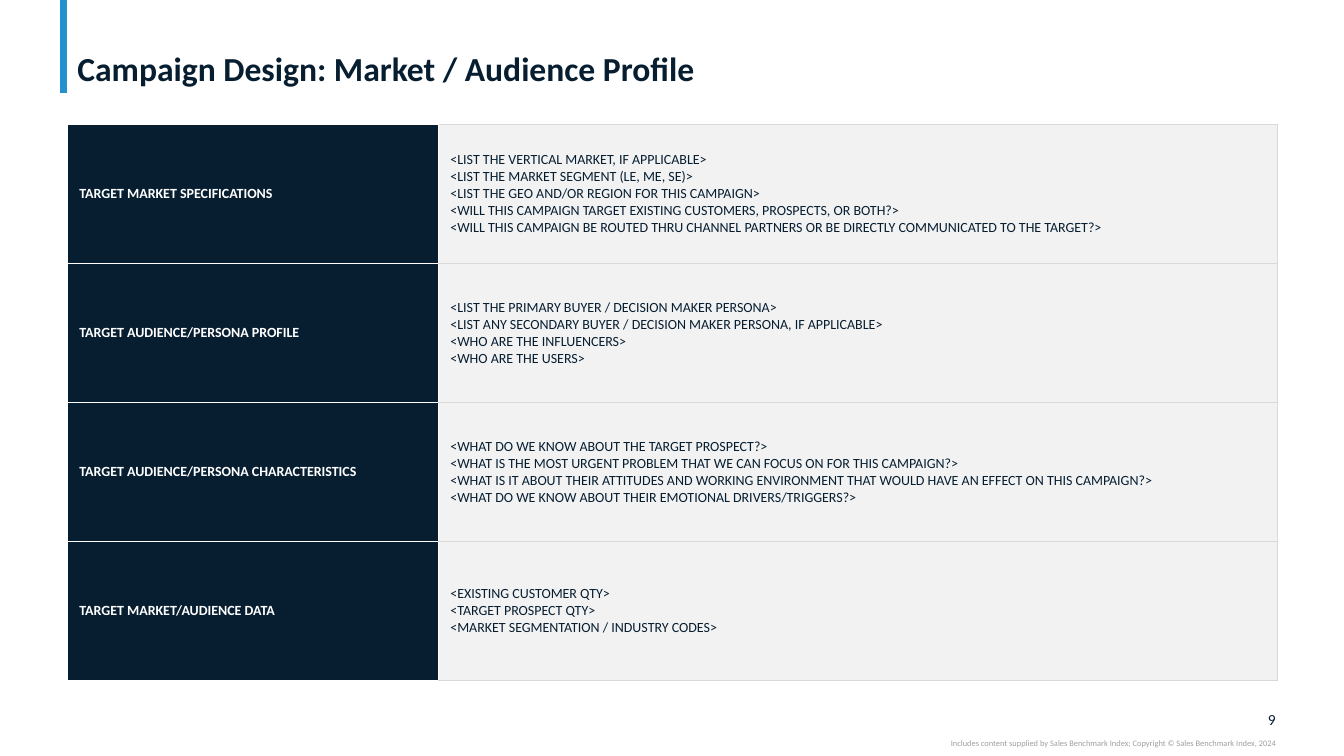
from lxml.etree import SubElement
from pptx import Presentation
from pptx.dml.color import RGBColor
from pptx.enum.shapes import MSO_CONNECTOR
from pptx.enum.text import MSO_ANCHOR, PP_ALIGN
from pptx.oxml.ns import qn
from pptx.util import Cm, Pt

NAVY = RGBColor(0x07, 0x1E, 0x31)
BLUE = RGBColor(0x23, 0x91, 0xCF)
WHITE = RGBColor(0xFF, 0xFF, 0xFF)
PALE_GRAY = RGBColor(0xF2, 0xF2, 0xF2)
BORDER_GRAY = RGBColor(0xD9, 0xD9, 0xD9)
FOOTER_GRAY = RGBColor(0xA0, 0xA0, 0xA0)
FONT = "Calibri"

LABEL_BORDERS = {"L": WHITE, "R": WHITE, "T": WHITE, "B": WHITE}
PROMPT_BORDERS = {"L": WHITE, "R": BORDER_GRAY, "T": BORDER_GRAY, "B": BORDER_GRAY}

PROFILE = [
    ("TARGET MARKET SPECIFICATIONS", [
        "<LIST THE VERTICAL MARKET, IF APPLICABLE>",
        "<LIST THE MARKET SEGMENT (LE, ME, SE)>",
        "<LIST THE GEO AND/OR REGION FOR THIS CAMPAIGN>",
        "<WILL THIS CAMPAIGN TARGET EXISTING CUSTOMERS, PROSPECTS, OR BOTH?>",
        "<WILL THIS CAMPAIGN BE ROUTED THRU CHANNEL PARTNERS OR BE DIRECTLY COMMUNICATED TO THE TARGET?>",
    ]),
    ("TARGET AUDIENCE/PERSONA PROFILE", [
        "<LIST THE PRIMARY BUYER / DECISION MAKER PERSONA>",
        "<LIST ANY SECONDARY BUYER / DECISION MAKER PERSONA, IF APPLICABLE>",
        "<WHO ARE THE INFLUENCERS>",
        "<WHO ARE THE USERS>",
    ]),
    ("TARGET AUDIENCE/PERSONA CHARACTERISTICS", [
        "<WHAT DO WE KNOW ABOUT THE TARGET PROSPECT?>",
        "<WHAT IS THE MOST URGENT PROBLEM THAT WE CAN FOCUS ON FOR THIS CAMPAIGN?>",
        "<WHAT IS IT ABOUT THEIR ATTITUDES AND WORKING ENVIRONMENT THAT WOULD HAVE AN EFFECT ON THIS CAMPAIGN?>",
        "<WHAT DO WE KNOW ABOUT THEIR EMOTIONAL DRIVERS/TRIGGERS?>",
    ]),
    ("TARGET MARKET/AUDIENCE DATA", [
        "<EXISTING CUSTOMER QTY>",
        "<TARGET PROSPECT QTY>",
        "<MARKET SEGMENTATION / INDUSTRY CODES>",
    ]),
]


def add_run(paragraph, text, size, color, bold=False):
    run = paragraph.add_run()
    run.text = text
    run.font.name = FONT
    run.font.size = Pt(size)
    run.font.bold = bold
    run.font.color.rgb = color


def set_margins(target, horizontal, vertical):
    target.margin_left = target.margin_right = Cm(horizontal)
    target.margin_top = target.margin_bottom = Cm(vertical)


def add_accent_line(slide):
    line = slide.shapes.add_connector(MSO_CONNECTOR.STRAIGHT, Cm(1.6), Cm(0), Cm(1.6), Cm(2.34))
    line.line.color.rgb = BLUE
    line.line.width = Pt(5)
    SubElement(line._element.spPr, qn("a:effectLst"))


def set_title(slide, text):
    title = slide.shapes.title
    title.left, title.top, title.width, title.height = Cm(1.7), Cm(0.1), Cm(30.45), Cm(2.13)
    frame = title.text_frame
    frame.word_wrap = True
    frame.vertical_anchor = MSO_ANCHOR.BOTTOM
    set_margins(frame, 0.25, 0)
    paragraph = frame.paragraphs[0]
    paragraph.alignment = PP_ALIGN.LEFT
    paragraph.line_spacing = 0.9
    add_run(paragraph, text, 24, NAVY, bold=True)


def add_footer(slide, text, left, top, width, height, size, color, anchor):
    frame = slide.shapes.add_textbox(Cm(left), Cm(top), Cm(width), Cm(height)).text_frame
    frame.word_wrap = True
    frame.vertical_anchor = anchor
    set_margins(frame, 0, 0)
    paragraph = frame.paragraphs[0]
    paragraph.alignment = PP_ALIGN.RIGHT
    add_run(paragraph, text, size, color)


def set_borders(cell, borders):
    properties = cell._tc.get_or_add_tcPr()
    for side, color in borders.items():
        line = SubElement(properties, qn(f"a:ln{side}"), w=str(Pt(0.5)))
        fill = SubElement(line, qn("a:solidFill"))
        SubElement(fill, qn("a:srgbClr"), val=str(color))


def fill_cell(cell, lines, fill, color, borders, bold=False):
    set_borders(cell, borders)
    cell.fill.solid()
    cell.fill.fore_color.rgb = fill
    cell.vertical_anchor = MSO_ANCHOR.MIDDLE
    set_margins(cell, 0.3, 0.2)
    frame = cell.text_frame
    for index, text in enumerate(lines):
        paragraph = frame.add_paragraph() if index else frame.paragraphs[0]
        add_run(paragraph, text, 10, color, bold)


def add_profile_table(slide):
    row_height = 3.5
    table = slide.shapes.add_table(
        len(PROFILE), 2, Cm(1.7), Cm(3.14), Cm(30.48), Cm(row_height * len(PROFILE))
    ).table
    table.first_row = False
    table.horz_banding = False
    table.columns[0].width = Cm(9.35)
    table.columns[1].width = Cm(21.13)
    for index, (label, prompts) in enumerate(PROFILE):
        table.rows[index].height = Cm(row_height)
        fill_cell(table.cell(index, 0), [label], NAVY, WHITE, LABEL_BORDERS, bold=True)
        fill_cell(table.cell(index, 1), prompts, PALE_GRAY, NAVY, PROMPT_BORDERS)


def main():
    presentation = Presentation()
    presentation.slide_width = Cm(33.87)
    presentation.slide_height = Cm(19.05)
    slide = presentation.slides.add_slide(presentation.slide_layouts[5])
    add_accent_line(slide)
    add_footer(slide, "9", 31.3, 17.9, 0.85, 0.48, 11, NAVY, MSO_ANCHOR.MIDDLE)
    add_footer(
        slide,
        "Includes content supplied by Sales Benchmark Index; Copyright © Sales Benchmark Index, 2024",
        19.05, 18.6, 13.1, 0.25, 6, FOOTER_GRAY, MSO_ANCHOR.TOP,
    )
    set_title(slide, "Campaign Design: Market / Audience Profile")
    add_profile_table(slide)
    presentation.save("out.pptx")


if __name__ == "__main__":
    main()
